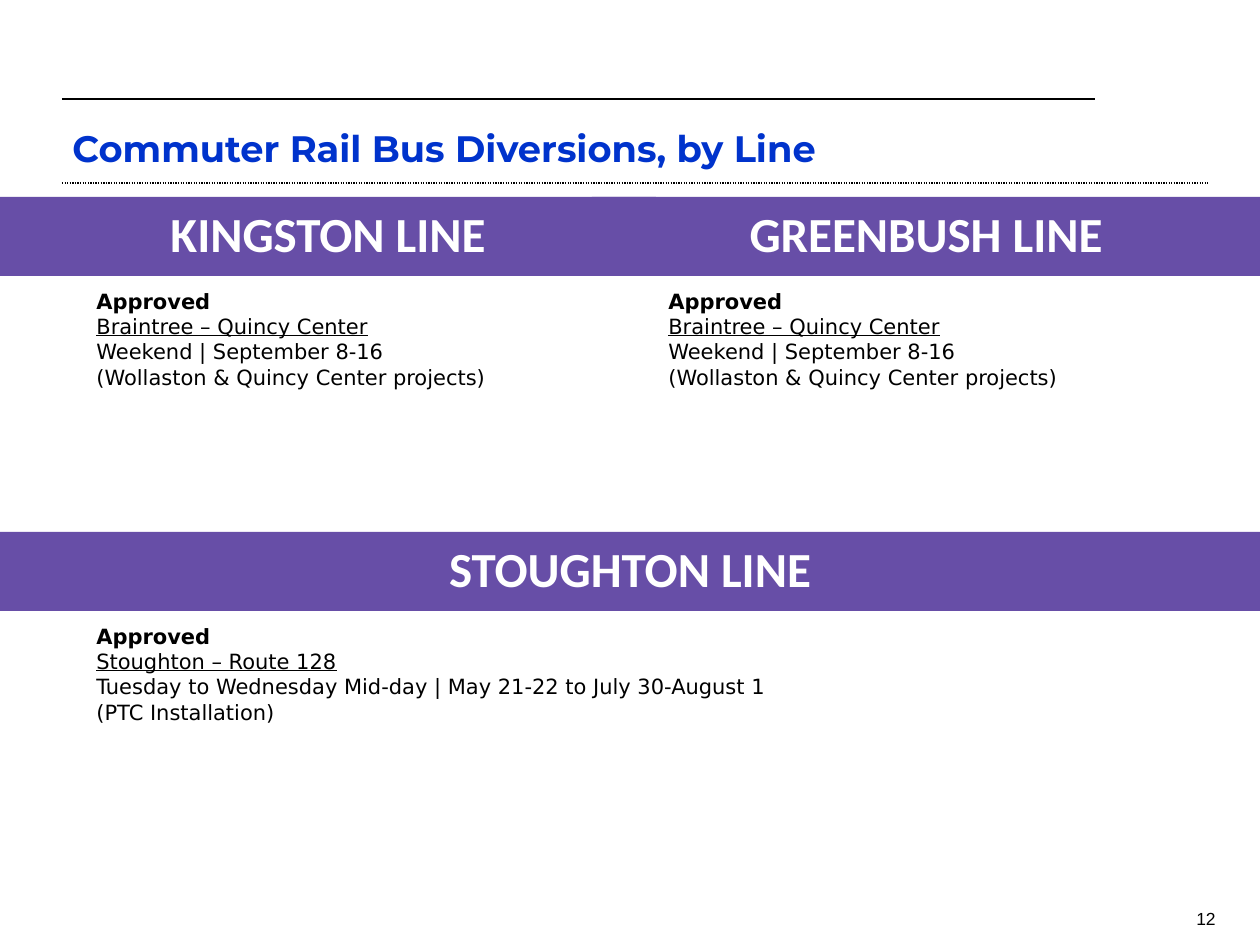
from lxml import etree
from pptx import Presentation
from pptx import util as u
from pptx.dml.color import RGBColor
from pptx.enum import dml, shapes, text
from pptx.oxml.ns import qn

SCALE = u.Inches(1) / 126
BLACK, WHITE, PURPLE, BLUE = "000000", "FFFFFF", "674EA7", "0033CC"


def px(*nums):
    return [u.Emu(round(n * SCALE)) for n in nums]


def write(frame, row, size, font, tint, bold=False, line=False, first=True):
    para = frame.paragraphs[0] if first else frame.add_paragraph()
    run = para.add_run()
    run.text = row
    run.font.size = u.Pt(size)
    run.font.name = font
    run.font.bold = bold
    run.font.underline = line
    run.font.color.rgb = RGBColor.from_string(tint)
    return para


deck = Presentation()
deck.slide_width, deck.slide_height = px(1260, 945)
slide = deck.slides.add_slide(deck.slide_layouts[5])
items = slide.shapes

rules = [(99, 1095, 1, None), (183, 1208, 0.75, dml.MSO_LINE.ROUND_DOT)]
for y, end, width, dash in rules:
    rule = items.add_connector(shapes.MSO_CONNECTOR.STRAIGHT, *px(62, y, end, y))
    rule.line.color.rgb = RGBColor.from_string(BLACK)
    rule.line.width = u.Pt(width)
    if dash:
        rule.line.dash_style = dash
    etree.SubElement(rule._element.spPr, qn("a:effectLst"))

bands = [
    ("KINGSTON LINE", 0, 197, 656),
    ("GREENBUSH LINE", 592, 197, 668),
    ("STOUGHTON LINE", 0, 532, 1260),
]
for name, x, y, wide in bands:
    if name == "KINGSTON LINE":
        band = items.title
        band.left, band.top, band.width, band.height = px(x, y, wide, 79)
    else:
        band = items.add_shape(shapes.MSO_SHAPE.RECTANGLE, *px(x, y, wide, 79))
        band.shadow.inherit = False
    band.fill.solid()
    band.fill.fore_color.rgb = RGBColor.from_string(PURPLE)
    band.line.fill.background()
    frame = band.text_frame
    frame.word_wrap = True
    frame.auto_size = text.MSO_AUTO_SIZE.NONE
    frame.vertical_anchor = text.MSO_ANCHOR.MIDDLE
    frame.margin_left = frame.margin_right = u.Inches(0.1)
    frame.margin_top = frame.margin_bottom = u.Inches(0.1)
    para = write(frame, name, 28, "Calibri", WHITE, bold=True)
    para.alignment = text.PP_ALIGN.CENTER
    para.line_spacing = 0.9

quincy = [
    "Braintree – Quincy Center",
    "Weekend | September 8-16",
    "(Wollaston & Quincy Center projects)",
]
stoughton = [
    "Stoughton – Route 128",
    "Tuesday to Wednesday Mid-day | May 21-22 to July 30-August 1",
    "(PTC Installation)",
]
notes = [(84, 276, 508, quincy), (84, 611, 1071, stoughton), (656, 276, 528, quincy)]
for x, y, wide, rows in notes:
    frame = items.add_textbox(*px(x, y, wide, 471)).text_frame
    frame.word_wrap = True
    frame.margin_left = frame.margin_right = u.Inches(0.1)
    frame.margin_top = frame.margin_bottom = u.Inches(0.1)
    for i, row in enumerate(["Approved"] + rows):
        write(frame, row, 12, "DejaVu Sans", BLACK, i == 0, i == 1, i == 0)

frame = items.add_textbox(*px(60, 113, 1140, 87)).text_frame
frame.word_wrap = True
frame.margin_top = frame.margin_bottom = u.Inches(0.1)
write(frame, "Commuter Rail Bus Diversions, by Line", 21, "Montserrat", BLUE, bold=True)

frame = items.add_textbox(*px(1123, 902, 105, 32)).text_frame
frame.word_wrap = True
frame.vertical_anchor = text.MSO_ANCHOR.MIDDLE
para = write(frame, "12", 10, "Arial", BLACK)
para.alignment = text.PP_ALIGN.RIGHT

deck.save("out.pptx")
